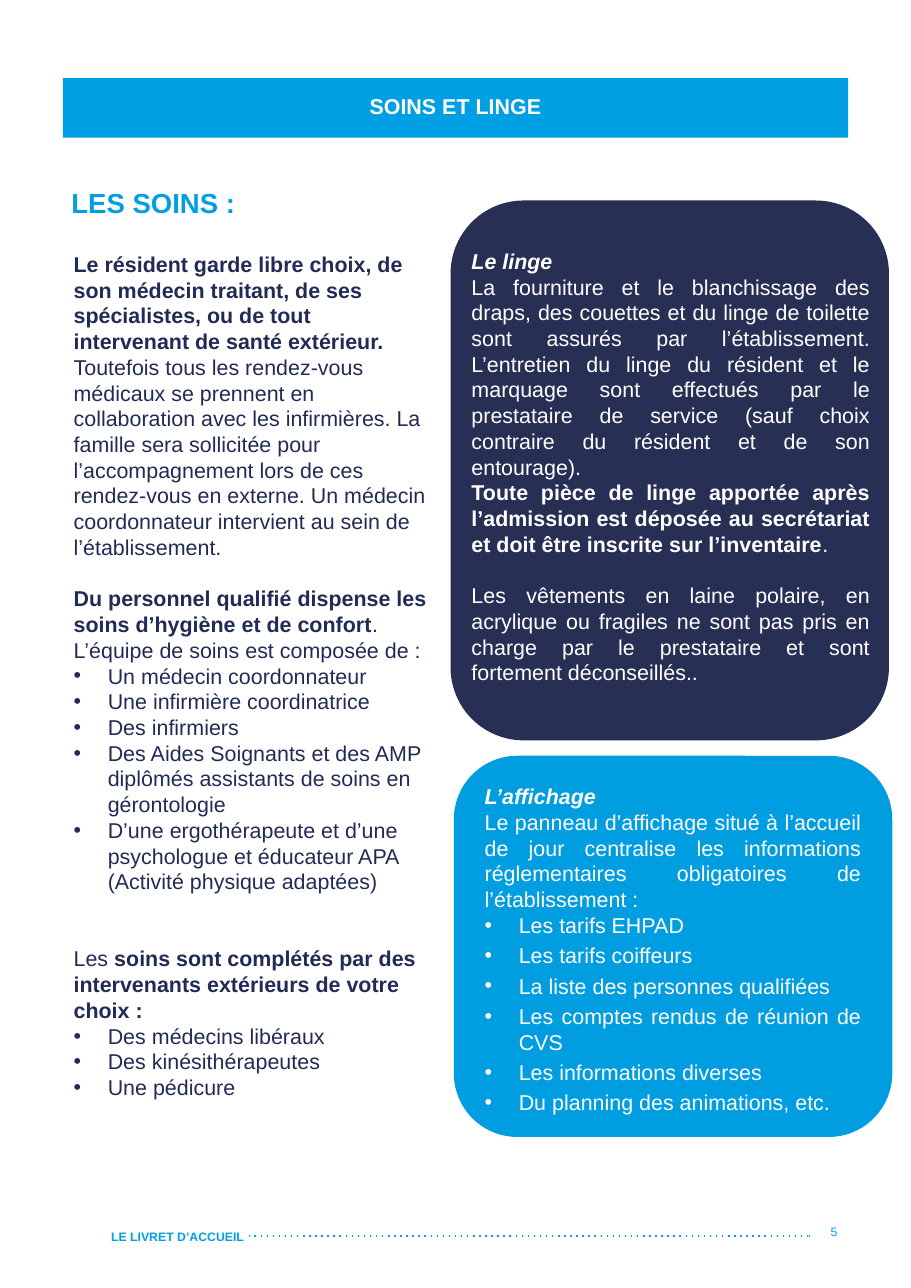
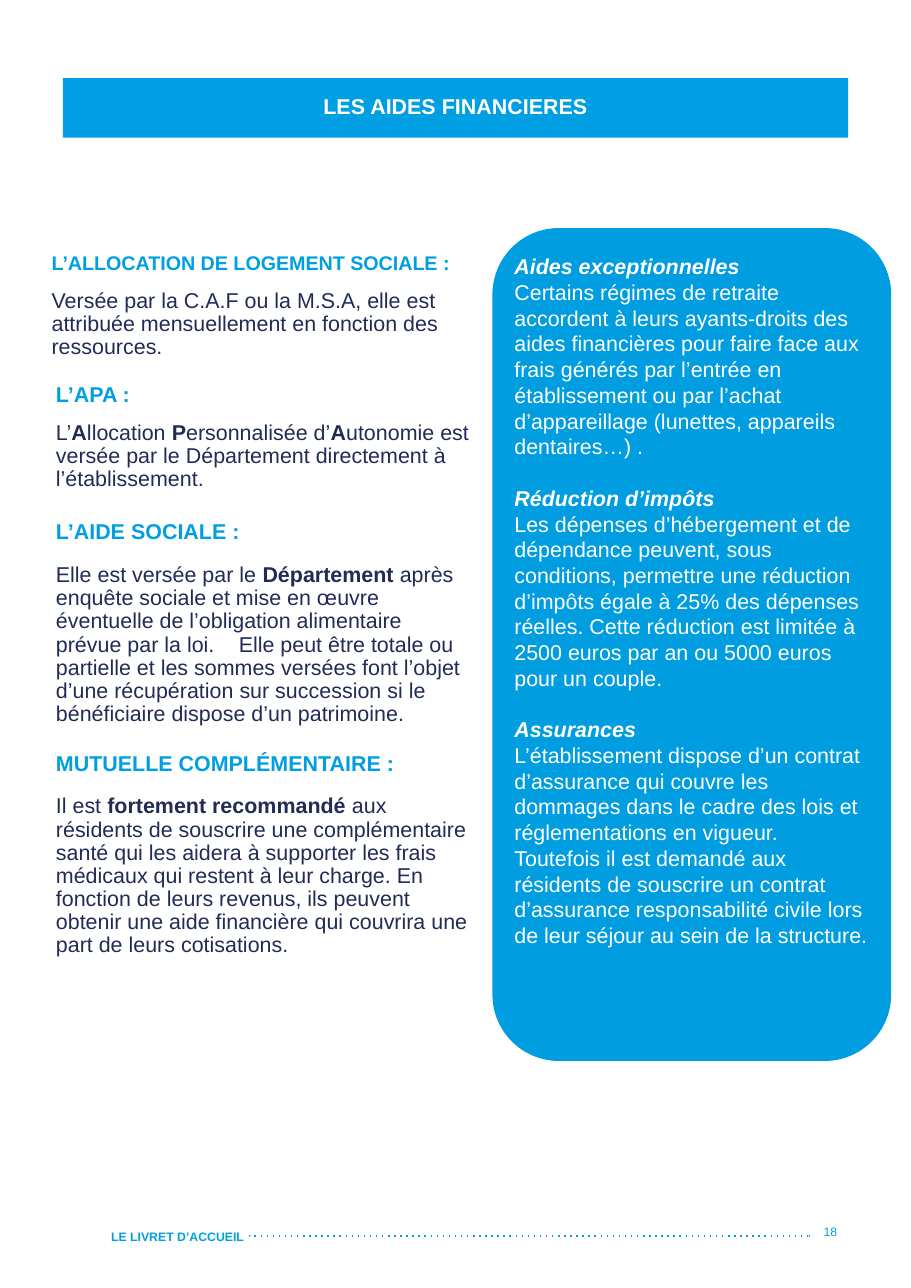
from dataclasses import dataclass

import lxml.etree
import pptx
import pptx.dml.color
import pptx.enum.dml
import pptx.enum.shapes
import pptx.enum.text
import pptx.oxml.ns
import pptx.util

CELL = 0.1
COLS, ROWS = 82.7, 116.9
FONT = "Arial"
BLANK_LINE = 16.8
COLORS = {
    "blue": "009FE3",
    "card_blue": "009DE0",
    "card_navy": "282F55",
    "text": "212B55",
    "white": "FFFFFF",
}
ALIGN = pptx.enum.text.PP_ALIGN
ANCHOR = pptx.enum.text.MSO_ANCHOR
SHAPE = pptx.enum.shapes.MSO_SHAPE


@dataclass(frozen=True)
class Box:
    col: float
    row: float
    cols: float
    rows: float


@dataclass(frozen=True)
class Para:
    text: str
    italic: bool = False
    bullet: bool = False
    before: float = 0
    after: float = 0
    tab: float = 0


@dataclass(frozen=True)
class Style:
    color: str = "text"
    size: float = 14
    bold: bool = False
    align: ALIGN = ALIGN.LEFT
    anchor: ANCHOR = ANCHOR.TOP
    spacing: float = 1.0
    inset: tuple[float, float] = (1, 0.5)


@dataclass(frozen=True)
class Card:
    box: Box
    fill: str
    text_box: Box
    paras: list[Para]
    align: ALIGN = ALIGN.LEFT


@dataclass(frozen=True)
class Section:
    title: str
    head: Box
    body: Box
    para: Para
    size: float = 14


@dataclass(frozen=True)
class Page:
    title: str
    number: int
    cards: list[Card]


BODY = Style()
TIGHT = Style(spacing=0.9)
BAND = Style("white", bold=True, align=ALIGN.CENTER, anchor=ANCHOR.MIDDLE, spacing=0.9)
FOOTER = Style("blue", 8, True)
PAGE_NUMBER = Style("blue", 8, align=ALIGN.RIGHT, anchor=ANCHOR.MIDDLE)


def grid(n: float) -> int:
    return pptx.util.Inches(n * CELL)


def place(box: Box) -> tuple[int, int, int, int]:
    return grid(box.col), grid(box.row), grid(box.cols), grid(box.rows)


def rgb(name: str) -> pptx.dml.color.RGBColor:
    return pptx.dml.color.RGBColor.from_string(COLORS[name])


def add_ppr(p, tag: str, **attrs: str):
    return lxml.etree.SubElement(p._p.get_or_add_pPr(), pptx.oxml.ns.qn(tag), **attrs)


def write_para(p, para: Para, style: Style) -> None:
    if para.bullet:
        ppr = p._p.get_or_add_pPr()
        ppr.set("marL", str(grid(3.1)))
        ppr.set("indent", str(-grid(3.1)))
        add_ppr(p, "a:buFont", typeface=FONT)
        add_ppr(p, "a:buChar", char="•")
    if para.tab:
        tabs = add_ppr(p, "a:tabLst")
        lxml.etree.SubElement(tabs, pptx.oxml.ns.qn("a:tab"), pos=str(grid(para.tab)), algn="l")
    p.alignment = style.align
    p.line_spacing = style.spacing
    p.space_before = pptx.util.Pt(para.before)
    p.space_after = pptx.util.Pt(para.after)
    for i, part in enumerate(para.text.split("*")):
        if part:
            r = p.add_run()
            r.text = part
            r.font.name = FONT
            r.font.size = pptx.util.Pt(style.size)
            r.font.bold = style.bold or i % 2 == 1
            r.font.italic = para.italic
            r.font.color.rgb = rgb(style.color)


def write(sp, paras: list[Para], style: Style) -> None:
    tf = sp.text_frame
    tf.word_wrap = True
    tf.vertical_anchor = style.anchor
    tf.margin_left = tf.margin_right = grid(style.inset[0])
    tf.margin_top = tf.margin_bottom = grid(style.inset[1])
    for i, para in enumerate(paras):
        write_para(tf.add_paragraph() if i else tf.paragraphs[0], para, style)


def add_text(s, box: Box, paras: list[Para], style: Style) -> None:
    write(s.shapes.add_textbox(*place(box)), paras, style)


def add_filled(s, kind: SHAPE, box: Box, fill: str):
    sp = s.shapes.add_shape(kind, *place(box))
    sp.shadow.inherit = False
    sp.fill.solid()
    sp.fill.fore_color.rgb = rgb(fill)
    sp.line.fill.background()
    return sp


def add_heading(s, box: Box, title: str, size: float) -> None:
    add_text(s, box, [Para(title)], Style("blue", size, True, anchor=ANCHOR.MIDDLE))


def add_card(s, card: Card) -> None:
    add_filled(s, SHAPE.FLOWCHART_ALTERNATE_PROCESS, card.box, card.fill)
    add_text(s, card.text_box, card.paras, Style("white", align=card.align, inset=(0.4, 0.4)))


def add_section(s, section: Section) -> None:
    add_heading(s, section.head, section.title, section.size)
    add_text(s, section.body, [section.para], TIGHT)


def add_footer(s, number: int) -> None:
    line = s.shapes.add_connector(
        pptx.enum.shapes.MSO_CONNECTOR.STRAIGHT, grid(23.1), grid(112.2), grid(73.3), grid(112.2)
    )
    line.line.color.rgb = rgb("blue")
    line.line.width = pptx.util.Pt(1)
    line.line.dash_style = pptx.enum.dml.MSO_LINE.ROUND_DOT
    for dash in line._element.spPr.iter(pptx.oxml.ns.qn("a:prstDash")):
        dash.set("val", "dot")
    lxml.etree.SubElement(line._element.spPr, pptx.oxml.ns.qn("a:effectLst"))
    for col in (22.6, 73.4):
        add_filled(s, SHAPE.OVAL, Box(col, 112.1, 0.15, 0.15), "blue")
    add_text(s, Box(58.4, 108.7, 18.6, 6.2), [Para(str(number))], PAGE_NUMBER)
    add_text(s, Box(9.1, 111.1, 41.9, 2.4), [Para("LE LIVRET D’ACCUEIL")], FOOTER)


def add_page(prs, page: Page):
    s = prs.slides.add_slide(prs.slide_layouts[6])
    add_footer(s, page.number)
    write(add_filled(s, SHAPE.RECTANGLE, Box(5.7, 7.1, 71.3, 5.4), "blue"), [Para(page.title)], BAND)
    for card in page.cards:
        add_card(s, card)
    return s


def bullets(*items: str, after: float = 0) -> list[Para]:
    return [Para(item, bullet=True, after=after) for item in items]


def lead(title: str, before: float = 0) -> Para:
    return Para(f"*{title}*", italic=True, before=before)


CARE = [
    Para("*Le résident garde libre choix, de son médecin traitant, de ses spécialistes, ou de tout intervenant de santé extérieur. *Toutefois tous les rendez-vous médicaux se prennent en collaboration avec les infirmières. La famille sera sollicitée pour l’accompagnement lors de ces rendez-vous en externe. Un médecin coordonnateur intervient au sein de l’établissement."),
    Para("*Du personnel qualifié dispense les soins d’hygiène et de confort*.", before=BLANK_LINE),
    Para("L’équipe de soins est composée de :"),
    *bullets(
        "Un médecin coordonnateur",
        "Une infirmière coordinatrice",
        "Des infirmiers",
        "Des Aides Soignants et des AMP diplômés assistants de soins en gérontologie",
        "D’une ergothérapeute et d’une psychologue et éducateur APA (Activité physique adaptées)",
    ),
    Para("Les *soins sont complétés par des intervenants extérieurs de votre choix :*", before=2 * BLANK_LINE),
    *bullets("Des médecins libéraux", "Des kinésithérapeutes", "Une pédicure"),
]

LAUNDRY = Card(
    Box(40.9, 18.2, 39.8, 49), "card_navy", Box(42.4, 22.1, 37, 45.1),
    [
        lead("Le linge"),
        Para("La fourniture et le blanchissage des draps, des couettes et du linge de toilette sont assurés par l’établissement. L’entretien du linge du résident et le marquage sont effectués par le prestataire de service (sauf choix contraire du résident et de son entourage)."),
        Para("*Toute pièce de linge apportée après l’admission est déposée au secrétariat et doit être inscrite sur l’inventaire*."),
        Para("Les vêtements en laine polaire, en acrylique ou fragiles ne sont pas pris en charge par le prestataire et sont fortement déconseillés..", before=BLANK_LINE),
    ],
    ALIGN.JUSTIFY,
)

NOTICES = Card(
    Box(41.2, 68.6, 39.8, 34.6), "card_blue", Box(43.6, 70.7, 35, 31.7),
    [
        lead("L’affichage"),
        Para("Le panneau d’affichage situé à l’accueil de jour centralise les informations réglementaires obligatoires de l’établissement :"),
        *bullets(
            "Les tarifs EHPAD",
            "Les tarifs coiffeurs",
            "La liste des personnes qualifiées",
            "Les comptes rendus de réunion de CVS",
            "Les informations diverses",
            "Du planning des animations, etc.",
            after=3,
        ),
    ],
    ALIGN.JUSTIFY,
)

OTHER_AID = Card(
    Box(44.7, 20.7, 36.2, 75.6), "card_blue", Box(46.3, 22.6, 33, 71.6),
    [
        lead("Aides exceptionnelles"),
        Para("Certains régimes de retraite accordent à leurs ayants-droits des aides financières pour faire face aux frais générés par l’entrée en établissement ou par l’achat d’appareillage (lunettes, appareils dentaires…) ."),
        lead("Réduction d’impôts", BLANK_LINE),
        Para("Les dépenses d’hébergement et de dépendance peuvent, sous conditions, permettre une réduction d’impôts égale à 25% des dépenses réelles. Cette réduction est limitée à 2500 euros par an ou 5000 euros pour un couple."),
        lead("Assurances", BLANK_LINE),
        Para("L’établissement dispose d’un contrat d’assurance qui couvre les dommages dans le cadre des lois et réglementations en vigueur. Toutefois il est demandé aux résidents de souscrire un contrat d’assurance responsabilité civile lors de leur séjour au sein de la structure."),
    ],
)

AID_SECTIONS = [
    Section("L’ALLOCATION DE LOGEMENT SOCIALE :", Box(3.7, 21.8, 40.1, 4.1), Box(3.7, 25.8, 40.1, 7.9),
            Para("Versée par la C.A.F ou la M.S.A, elle est attribuée mensuellement en fonction des ressources."), 12.9),
    Section("L’APA :", Box(4.1, 33.7, 40.6, 4.1), Box(4.1, 37.8, 39.7, 7.9),
            Para("L’*A*llocation *P*ersonnalisée d’*A*utonomie est versée par le Département directement à l’établissement.")),
    Section("L’AIDE SOCIALE :", Box(4.1, 46.1, 40.6, 4.1), Box(4.1, 50.7, 39.7, 16),
            Para("Elle est versée par le *Département* après enquête sociale et mise en œuvre éventuelle de l’obligation alimentaire prévue par la loi. \tElle peut être totale ou partielle et les sommes versées font l’objet d’une récupération sur succession si le bénéficiaire dispose d’un patrimoine.", tab=16.6)),
    Section("MUTUELLE COMPLÉMENTAIRE :", Box(4.1, 67.2, 40.6, 4.1), Box(4.1, 71.7, 39.7, 16),
            Para("Il est *fortement recommandé *aux résidents de souscrire une complémentaire santé qui les aidera à supporter les frais médicaux qui restent à leur charge. En fonction de leurs revenus, ils peuvent obtenir une aide financière qui couvrira une part de leurs cotisations.")),
]


def main() -> None:
    prs = pptx.Presentation()
    prs.slide_width, prs.slide_height = grid(COLS), grid(ROWS)

    s = add_page(prs, Page("SOINS ET LINGE", 5, [LAUNDRY, NOTICES]))
    add_heading(s, Box(5.5, 16.3, 26.2, 4.1), "LES SOINS :", 18)
    add_text(s, Box(5.7, 22.3, 34.2, 76.3), CARE, BODY)

    s = add_page(prs, Page("LES AIDES FINANCIERES", 18, [OTHER_AID]))
    for section in AID_SECTIONS:
        add_section(s, section)

    prs.save("out.pptx")


if __name__ == "__main__":
    main()
